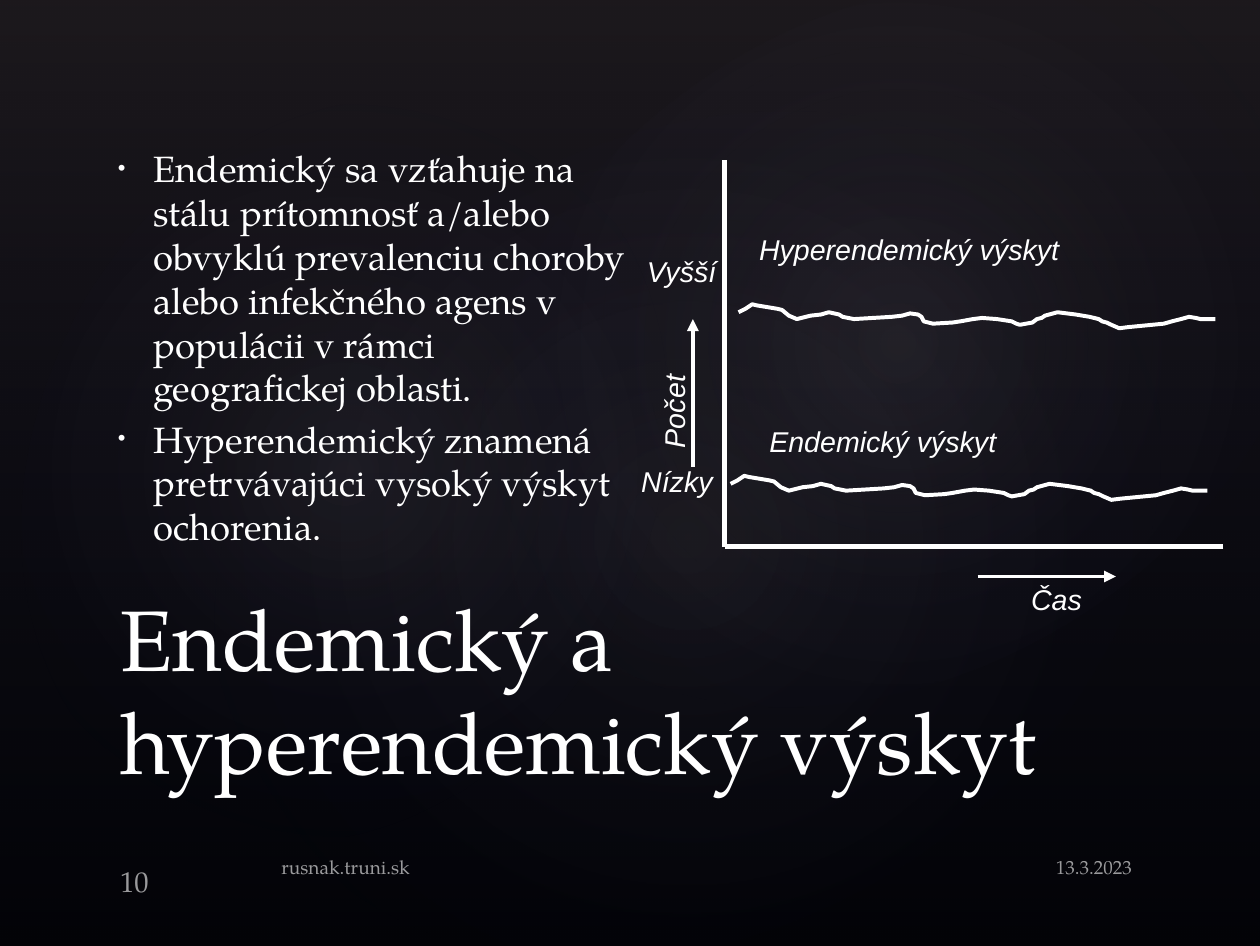
from pptx import Presentation
from pptx.dml.color import RGBColor
from pptx.enum.shapes import MSO_CONNECTOR, MSO_SHAPE
from pptx.enum.text import MSO_ANCHOR, PP_ALIGN
from pptx.oxml import parse_xml
from pptx.oxml.ns import nsdecls, qn
from pptx.util import Pt
from lxml.etree import SubElement

PX = 9144
PAGE_SIZE = (1102, 827)
COLORS = {"black": "000000", "white": "FFFFFF", "plum": "504652",
          "navy": "242852", "mist": "C4BCC6"}
SERIF, SANS = "TeX Gyre Pagella", "Arial"

GLOWS = [
    ((165, 125, 873, 688), 328.7, 7),
    ((-33, 141, 668, 540), 294.3, 8),
    ((395, 14, 781, 573), 328.7, 8),
]

DEFINITIONS = [
    "Endemický sa vzťahuje na stálu prítomnosť a/alebo obvyklú prevalenciu choroby "
    "alebo infekčného agens v populácii v rámci geografickej oblasti.",
    "Hyperendemický znamená pretrvávajúci vysoký výskyt ochorenia.",
]
TITLE = "Endemický a hyperendemický výskyt"
FOOTERS = [
    ("13.3.2023", (874, 742, 127, 44), 12, PP_ALIGN.RIGHT, MSO_ANCHOR.TOP, 6),
    ("10", (94, 742, 90, 44), 18, PP_ALIGN.LEFT, MSO_ANCHOR.BOTTOM, 1),
    ("rusnak.truni.sk", (235, 742, 599, 44), 12, PP_ALIGN.LEFT, MSO_ANCHOR.TOP, 6),
]

LABELS = [
    ("Endemický výskyt", (663, 370, 258, 36), 0),
    ("Hyperendemický výskyt", (654, 202, 359, 36), 0),
    ("Čas", (892, 508, 84, 36), 0),
    ("Počet", (545, 337, 93, 36), 270),
    ("Vyšší", (556, 221, 101, 36), 0),
    ("Nízky", (551, 405, 84, 36), 0),
]
AXES = [(634, 140, 634, 478), (1070, 478, 634, 478)]
ARROWS = [(855, 504, 976, 504), (606, 408, 606, 279)]

WAVE_STARTS = [(639, 423), (646, 273)]
WAVE = [
    (0, 0), (6, -3), (12, -7), (16, -6), (34, -3), (38, -2), (44, 3), (51, 6),
    (63, 3), (72, 2), (79, 0), (88, 2), (91, 4), (101, 6), (134, 4), (143, 3),
    (150, 1), (157, 2), (160, 4), (162, 8), (170, 10), (187, 9), (194, 8),
    (205, 6), (213, 5), (226, 6), (239, 8), (243, 10), (246, 11), (257, 9),
    (261, 6), (265, 5), (268, 3), (279, 0), (295, 2), (307, 4), (315, 6),
    (318, 8), (322, 9), (326, 11), (333, 14), (341, 13), (372, 10), (379, 8),
    (387, 6), (394, 4), (400, 5), (404, 6), (417, 6),
]


def emu(lengths):
    return [length * PX for length in lengths]


def rgb(name):
    return RGBColor.from_string(COLORS[name])


def assign(target, **formats):
    for name, value in formats.items():
        setattr(target, name, value)


def add_gradient(page, kind, frame, stops, direction, rotation=0):
    shape = page.shapes.add_shape(kind, *emu(frame))
    shape.rotation = rotation
    shape.shadow.inherit = False
    shape.line.fill.background()
    marks = "".join(
        f'<a:gs pos="{place * 1000}"><a:srgbClr val="{COLORS[color]}">'
        f'<a:alpha val="{alpha * 1000}"/></a:srgbClr></a:gs>'
        for place, color, alpha in stops)
    gradient = parse_xml(f'<a:gradFill {nsdecls("a")} rotWithShape="1">'
                         f'<a:gsLst>{marks}</a:gsLst>{direction}</a:gradFill>')
    shape.element.spPr.find(qn("a:prstGeom")).addnext(gradient)


def add_text(page, frame, texts, font, size, anchor=MSO_ANCHOR.TOP, margins=(11, 6, 11, 6),
             italic=False, rotation=0, alpha=100, **para_formats):
    box = page.shapes.add_textbox(*emu(frame))
    box.rotation = rotation
    left, top, right, bottom = emu(margins)
    assign(box.text_frame, word_wrap=True, vertical_anchor=anchor, margin_left=left,
           margin_top=top, margin_right=right, margin_bottom=bottom)
    box.text_frame.text = "\n".join(texts)
    for para in box.text_frame.paragraphs:
        assign(para, **para_formats)
        span = para.runs[0]
        assign(span.font, name=font, size=Pt(size), italic=italic)
        span.font.color.rgb = rgb("white")
        if alpha < 100:
            color = span.font.fill._xPr.find(qn("a:solidFill"))[0]
            SubElement(color, qn("a:alpha"), val=str(alpha * 1000))
    return box


def add_bullets(box):
    for para in box.text_frame.paragraphs:
        props = para._p.get_or_add_pPr()
        props.set("marL", str(33 * PX))
        props.set("indent", str(-31 * PX))
        SubElement(props, qn("a:buSzPct"), val="60000")
        SubElement(props, qn("a:buFont"), typeface=SANS)
        SubElement(props, qn("a:buChar"), char="•")


def add_line(page, ends, width, arrow=False):
    line = page.shapes.add_connector(MSO_CONNECTOR.STRAIGHT, *emu(ends))
    line.line.color.rgb = rgb("white")
    line.line.width = Pt(width)
    if arrow:
        SubElement(line.line._get_or_add_ln(), qn("a:tailEnd"), type="triangle")
    SubElement(line.element.spPr, qn("a:effectLst"))


def add_wave(page, start):
    left, top = start
    points = [(left + x, top + y) for x, y in WAVE]
    builder = page.shapes.build_freeform(*points[0], scale=PX)
    builder.add_line_segments(points[1:], close=False)
    wave = builder.convert_to_shape()
    wave.shadow.inherit = False
    wave.fill.background()
    wave.line.color.rgb = rgb("white")
    wave.line.width = Pt(2.5)


def main():
    deck = Presentation()
    deck.slide_width, deck.slide_height = emu(PAGE_SIZE)
    page = deck.slides.add_slide(deck.slide_layouts[6])
    page.background.fill.solid()
    page.background.fill.fore_color.rgb = rgb("black")

    add_gradient(page, MSO_SHAPE.RECTANGLE, (0, 0, *PAGE_SIZE),
                 [(0, "plum", 36), (100, "navy", 10)], '<a:lin ang="5400000" scaled="0"/>')
    center = ('<a:path path="circle"><a:fillToRect l="50000" t="50000" '
              'r="50000" b="50000"/></a:path>')
    for frame, rotation, alpha in GLOWS:
        add_gradient(page, MSO_SHAPE.OVAL, frame,
                     [(0, "mist", alpha), (58, "navy", 0)], center, rotation)

    add_bullets(add_text(page, (90, 83, 479, 441), DEFINITIONS, SERIF, 23,
                         MSO_ANCHOR.MIDDLE, space_before=Pt(4.6)))
    add_text(page, (94, 588, 909, 110), [TITLE], SERIF, 54, MSO_ANCHOR.BOTTOM)
    for text, frame, size, align, anchor, bottom in FOOTERS:
        add_text(page, frame, [text], SERIF, size, anchor, (11, 6, 11, bottom),
                 alpha=60, alignment=align)

    for ends in AXES:
        add_line(page, ends, 3)
    for ends in ARROWS:
        add_line(page, ends, 2.5, arrow=True)
    for start in WAVE_STARTS:
        add_wave(page, start)
    for text, frame, rotation in LABELS:
        add_text(page, frame, [text], SANS, 18, margins=(10, 5, 10, 5), italic=True,
                 rotation=rotation, line_spacing=0.87)

    deck.save("out.pptx")


if __name__ == "__main__":
    main()
